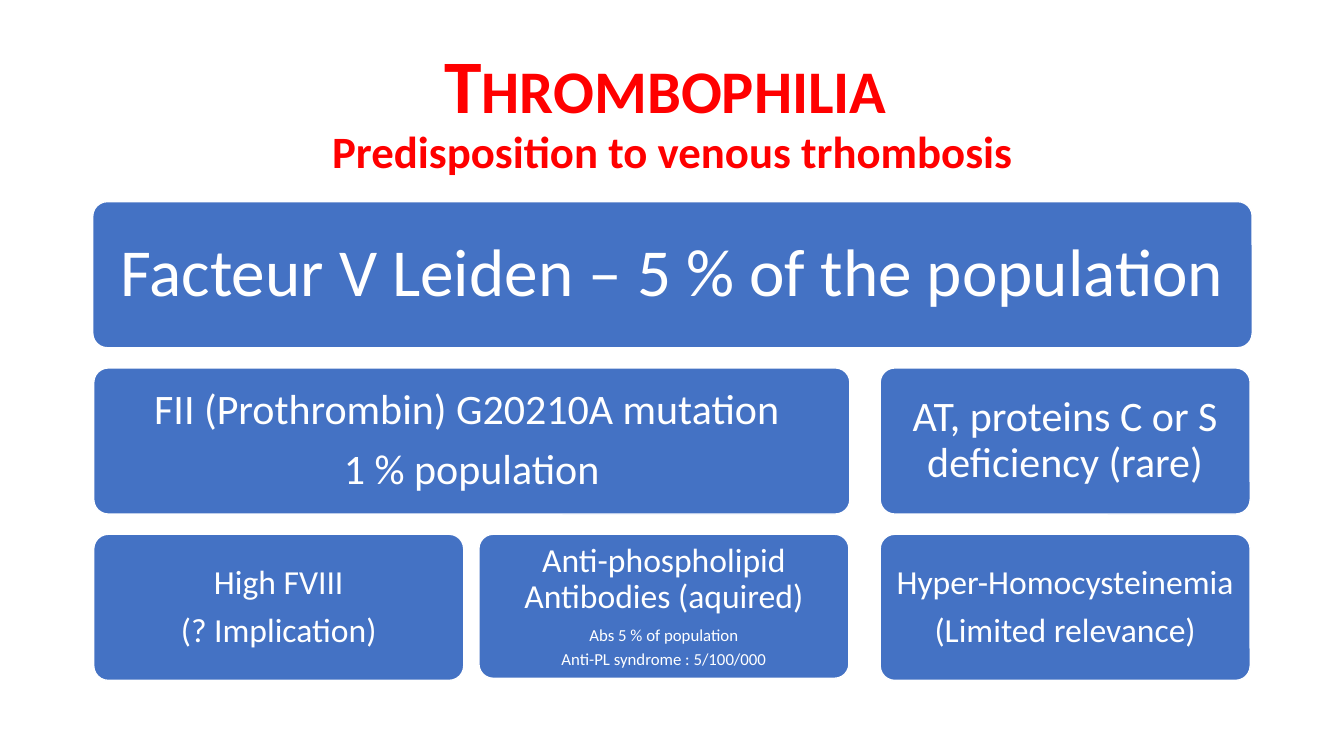
"""Build the thrombophilia slide: a title above three rows of cards."""
from pptx import Presentation
from pptx.dml.color import RGBColor
from pptx.enum.shapes import MSO_SHAPE as Shape
from pptx.enum.text import MSO_ANCHOR as Anchor, PP_ALIGN as Align
from pptx.util import Pt

EMU_PER_PX = 9144
FONT = "Calibri"
RED, BLUE, WHITE = "FF0000", "4472C4", "FFFFFF"
COLUMNS = (93, 475, 873)
ROWS = (200, 365, 530)
CARD_WIDTH, CARD_HEIGHT = 367, 145


def px(*lengths):
    return [length * EMU_PER_PX for length in lengths]


def paint(target, colour):
    target.rgb = RGBColor.from_string(colour)


def add_run(paragraph, words, size, colour, bold=False):
    run = paragraph.add_run()
    run.text = words
    run.font.name = FONT
    run.font.size = Pt(size)
    run.font.bold = bold
    paint(run.font.color, colour)
    return run


def add_title(slide, heading, subheading):
    frame = slide.shapes.add_textbox(*px(92, 40, 1150, 145)).text_frame
    frame.word_wrap = True
    frame.vertical_anchor = Anchor.MIDDLE
    paragraph = frame.paragraphs[0]
    paragraph.alignment = Align.CENTER
    paragraph.line_spacing = 0.9
    small_caps = add_run(paragraph, heading, 54, RED, bold=True)
    small_caps.font._element.set("cap", "small")
    paragraph.add_line_break()
    add_run(paragraph, subheading, 32, RED, bold=True)


def add_card(slide, box, inset, lines):
    card = slide.shapes.add_shape(Shape.ROUNDED_RECTANGLE, *px(*box))
    card.adjustments[0] = 0.1
    card.shadow.inherit = False
    card.fill.solid()
    paint(card.fill.fore_color, BLUE)
    paint(card.line.color, WHITE)
    card.line.width = Pt(1)
    frame = card.text_frame
    frame.word_wrap = True
    frame.vertical_anchor = Anchor.MIDDLE
    frame.margin_left, frame.margin_top, frame.margin_right, frame.margin_bottom = px(*[inset] * 4)
    for index, (words, size) in enumerate(lines):
        paragraph = frame.add_paragraph() if index else frame.paragraphs[0]
        paragraph.alignment = Align.CENTER
        paragraph.line_spacing = 0.9
        paragraph.space_after = Pt(round(0.35 * size, 1))
        add_run(paragraph, words, size, WHITE)


def main():
    deck = Presentation()
    deck.slide_width, deck.slide_height = px(1333, 750)
    slide = deck.slides.add_slide(deck.slide_layouts[6])
    add_title(slide, "Thrombophilia ", "Predisposition to venous trhombosis")

    left, middle, right = COLUMNS
    top, centre, bottom = ROWS
    cards = [
        ((92, top, 1150, CARD_HEIGHT), 20,
         [("Facteur V Leiden – 5 % of the population", 48)]),
        ((left, centre, 750, CARD_HEIGHT), 12,
         [("FII (Prothrombin) G20210A mutation ", 30), ("1 % population", 30)]),
        ((left, bottom, CARD_WIDTH, CARD_HEIGHT), 10,
         [("High FVIII", 24), ("(? Implication)", 24)]),
        ((middle, bottom, CARD_WIDTH, 143), 10,
         [("Anti-phospholipid Antibodies (aquired)", 24),
          ("Abs 5 % of population", 12),
          ("Anti-PL syndrome : 5/100/000", 12)]),
        ((right, centre, CARD_WIDTH, CARD_HEIGHT), 12,
         [("AT, proteins C or S deficiency (rare)", 30)]),
        ((right, bottom, CARD_WIDTH, CARD_HEIGHT), 10,
         [("Hyper-Homocysteinemia", 24), ("(Limited relevance)", 24)]),
    ]
    for box, inset, lines in cards:
        add_card(slide, box, inset, lines)
    deck.save("out.pptx")


if __name__ == "__main__":
    main()
